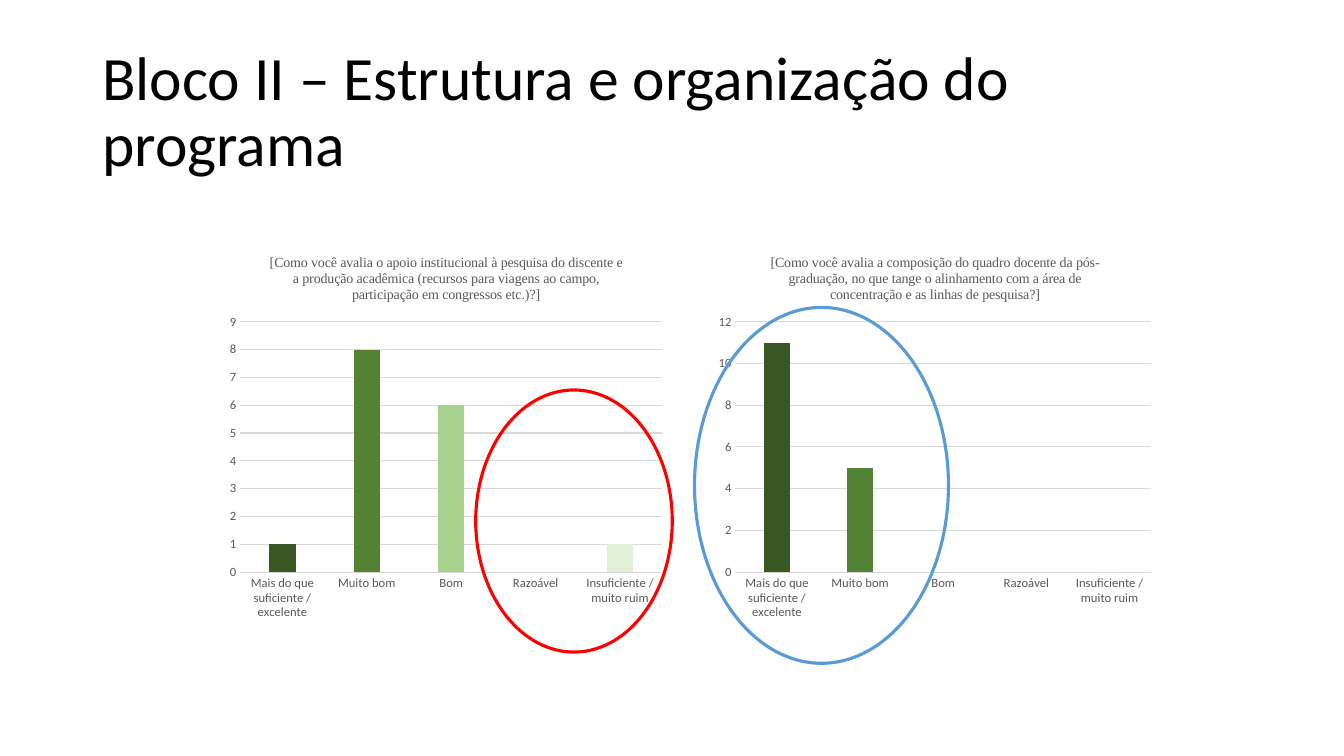
from dataclasses import dataclass

from pptx import Presentation
from pptx.chart import data
from pptx.dml.color import RGBColor
from pptx.enum import chart as ch, shapes, text
from pptx.util import Pt


@dataclass(frozen=True)
class Theme:
    font: str = "Calibri"
    question_font: str = "Times New Roman"
    heading_size: float = 44
    question_size: float = 10
    axis_size: float = 9
    ink: str = "000000"
    muted: str = "595959"
    rule: str = "D9D9D9"
    series: str = "4472C4"
    ratings: tuple = ("385723", "548235", "A9D18E", "C5E0B4", "E2F0D9")
    warning: str = "FF0000"
    praise: str = "5B9BD5"


THEME = Theme()
RATINGS = ("Mais do que suficiente / excelente", "Muito bom", "Bom", "Razoável",
           "Insuficiente / muito ruim")
CHART_WIDTH, CHART_HEIGHT, CHART_TOP = 321.8, 278.6, 169.9
# question, votes per rating, chart left, marker box relative to the chart, marker colour
SURVEY = (
    ("[Como você avalia o apoio institucional à pesquisa do discente e a produção "
     "acadêmica (recursos para viagens ao campo, participação em congressos etc.)?]",
     (1, 8, 6, 0, 1), 157.7, (182.1, 108.7, 140.4, 187.2), THEME.warning),
    ("[Como você avalia a composição do quadro docente da pós-graduação, no que tange "
     "o alinhamento com a área de concentração e as linhas de pesquisa?]",
     (11, 5, 0, 0, 0), 506.9, (-10.8, 49.7, 181.4, 254.2), THEME.praise),
)


def style_font(font, size, colour, name=THEME.font):
    font.size = Pt(size)
    font.name = name
    font.bold = False
    font.color.rgb = RGBColor.from_string(colour)


def style_line(line, colour, width):
    line.color.rgb = RGBColor.from_string(colour)
    line.width = Pt(width)


def add_heading(slide, box, wording):
    frame = slide.shapes.add_textbox(*map(Pt, box)).text_frame
    frame.word_wrap = True
    frame.vertical_anchor = text.MSO_ANCHOR.MIDDLE
    paragraph = frame.paragraphs[0]
    paragraph.line_spacing = 0.9
    run = paragraph.add_run()
    run.text = wording
    style_font(run.font, THEME.heading_size, THEME.ink)


def add_rating_chart(slide, box, question, votes):
    ratings = data.CategoryChartData()
    ratings.categories = RATINGS
    ratings.add_series(question, votes)
    chart = slide.shapes.add_chart(
        ch.XL_CHART_TYPE.COLUMN_CLUSTERED, *map(Pt, box), ratings).chart
    style_font(chart.font, THEME.question_size, THEME.ink)
    chart.has_legend = False

    chart.has_title = True
    chart.chart_title.include_in_layout = False
    run = chart.chart_title.text_frame.paragraphs[0].add_run()
    run.text = question
    style_font(run.font, THEME.question_size, THEME.muted, THEME.question_font)

    for axis in (chart.category_axis, chart.value_axis):
        axis.major_tick_mark = axis.minor_tick_mark = ch.XL_TICK_MARK.NONE
        style_font(axis.tick_labels.font, THEME.axis_size, THEME.muted)
    style_line(chart.category_axis.format.line, THEME.rule, 0.75)
    chart.value_axis.format.line.fill.background()
    style_line(chart.value_axis.major_gridlines.format.line, THEME.rule, 0.75)

    plot = chart.plots[0]
    plot.vary_by_categories = False
    plot.gap_width = 219
    plot.overlap = -27
    columns = plot.series[0]
    columns.format.fill.solid()
    columns.format.fill.fore_color.rgb = RGBColor.from_string(THEME.series)
    for index, colour in enumerate(THEME.ratings):
        fill = columns.points[index].format.fill
        fill.solid()
        fill.fore_color.rgb = RGBColor.from_string(colour)


def add_marker(slide, box, colour):
    """Circle the noteworthy answers with an unfilled ellipse."""
    marker = slide.shapes.add_shape(shapes.MSO_SHAPE.OVAL, *map(Pt, box))
    marker.shadow.inherit = False
    marker.fill.background()
    style_line(marker.line, colour, 2.25)


def main():
    deck = Presentation()
    deck.slide_width, deck.slide_height = Pt(960), Pt(540)
    slide = deck.slides.add_slide(deck.slide_layouts[6])
    add_heading(slide, (66, 28.8, 828, 104.4),
                "Bloco II – Estrutura e organização do programa")
    for question, votes, left, _, _ in SURVEY:
        add_rating_chart(slide, (left, CHART_TOP, CHART_WIDTH, CHART_HEIGHT),
                         question, votes)
    for _, _, left, (dx, dy, width, height), colour in SURVEY:
        add_marker(slide, (left + dx, CHART_TOP + dy, width, height), colour)
    deck.save("out.pptx")


if __name__ == "__main__":
    main()
